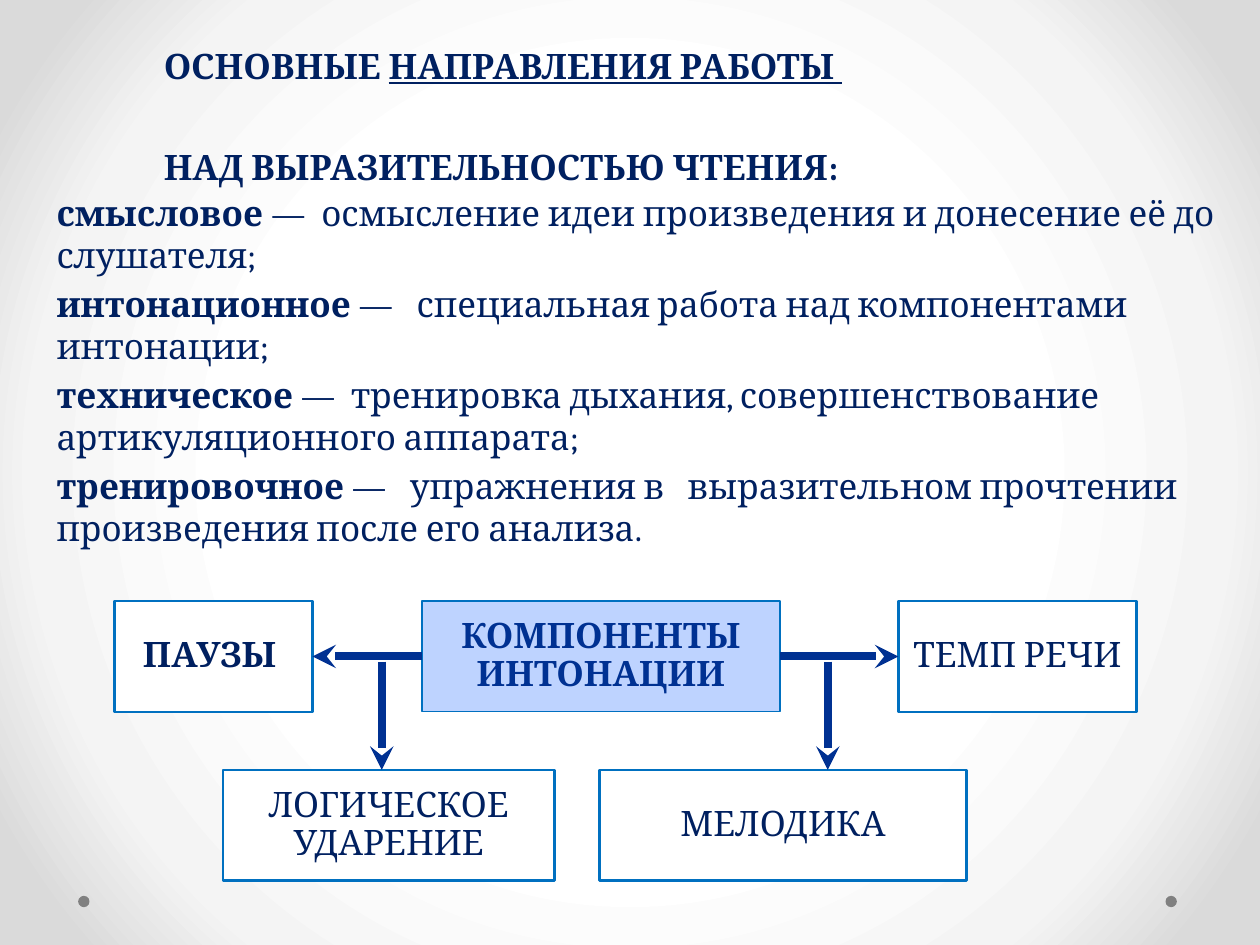
"""Builds a slide on the directions of work on expressive reading."""
from pptx import Presentation
from pptx.dml.color import RGBColor
from pptx.enum.shapes import MSO_CONNECTOR, MSO_SHAPE
from pptx.enum.text import MSO_ANCHOR, PP_ALIGN
from pptx.oxml import parse_xml
from pptx.oxml.ns import nsdecls
from pptx.util import Inches, Pt

CELL = Inches(0.1)
NAVY, BLUE, EDGE = "002060", "003192", "0070C0"
FONT = {"name": "Cambria", "size": Pt(20)}
FRAME = {"word_wrap": True, "vertical_anchor": MSO_ANCHOR.MIDDLE}
MARGINS = ["margin_left", "margin_top", "margin_right", "margin_bottom"]


def grid(*cells):
    return [round(c * CELL) for c in cells]


def style(obj, color=None, **values):
    for name, value in values.items():
        setattr(obj, name, value)
    if color:
        obj.color.rgb = RGBColor.from_string(color)


prs = Presentation()
prs.slide_width, prs.slide_height = grid(100, 75)
s = prs.slides.add_slide(prs.slide_layouts[6])

stops = "".join(
    f'<a:gs pos="{pos}000"><a:srgbClr val="{color}"/></a:gs>'
    for pos, color in [(50, "FFFFFF"), (76, "F4F4F4"), (92, "DADADA")]
)
s.background.fill.solid()
bg = s.background.fill._xPr
bg.replace(bg[0], parse_xml(
    f'<a:gradFill {nsdecls("a")} rotWithShape="1"><a:gsLst>{stops}</a:gsLst>'
    '<a:path path="circle"><a:fillToRect l="50000" t="50000" r="50000" b="50000"/>'
    '</a:path></a:gradFill>'
))

for x in (92.5, 6.2):
    sp = s.shapes.add_shape(MSO_SHAPE.OVAL, *grid(x, 71.1, 0.9, 0.9))
    sp.shadow.inherit = False
    sp.fill.solid()
    sp.fill.fore_color.rgb = RGBColor.from_string("808080")
    sp.line.fill.background()

tf = s.shapes.add_textbox(*grid(13, 3, 82, 7.7)).text_frame
style(tf, **FRAME, **dict.fromkeys(MARGINS, 0))
p = tf.paragraphs[0]
p.line_spacing = Pt(58)
for text, underline in [("ОСНОВНЫЕ ", False), ("НАПРАВЛЕНИЯ РАБОТЫ ", True),
                        ("НАД ВЫРАЗИТЕЛЬНОСТЬЮ ЧТЕНИЯ:", False)]:
    r = p.add_run()
    r.text = text
    style(r.font, NAVY, bold=True, underline=underline, **FONT)
    if underline:
        p.add_line_break()

directions = [
    ("смысловое", " —  осмысление идеи произведения и донесение её до слушателя;"),
    ("интонационное", " —   специальная работа над компонентами интонации;"),
    ("техническое", " —  тренировка дыхания, совершенствование артикуляционного аппарата;"),
    ("тренировочное", " —   упражнения в   выразительном прочтении произведения после его анализа."),
]
tf = s.shapes.add_textbox(*grid(3.5, 14.7, 94.5, 33.6)).text_frame
tf.word_wrap = True
for i, parts in enumerate(directions):
    p = tf.add_paragraph() if i else tf.paragraphs[0]
    p.space_before = Pt(4)
    for text, bold in zip(parts, (True, False)):
        r = p.add_run()
        r.text = text
        style(r.font, NAVY, bold=bold, **FONT)

TOP, BOTTOM, HEIGHT = 47.7, 61.1, 8.8
boxes = [
    ("ЛОГИЧЕСКОЕ УДАРЕНИЕ", 17.7, BOTTOM, 26.3, False, "FFFFFF", NAVY, 1.5),
    ("МЕЛОДИКА", 47.6, BOTTOM, 29.1, False, "FFFFFF", NAVY, 1.5),
    ("ПАУЗЫ ", 9.1, TOP, 15.7, True, "FFFFFF", NAVY, 1.5),
    ("ТЕМП РЕЧИ", 71.3, TOP, 18.9, False, "FFFFFF", NAVY, 1.5),
    ("КОМПОНЕНТЫ ИНТОНАЦИИ", 33.5, TOP, 28.4, True, "B7CFFF", BLUE, 0.75),
]
for text, x, y, w, bold, fill, color, weight in boxes:
    sp = s.shapes.add_shape(MSO_SHAPE.RECTANGLE, *grid(x, y, w, HEIGHT))
    sp.shadow.inherit = False
    sp.fill.solid()
    sp.fill.fore_color.rgb = RGBColor.from_string(fill)
    style(sp.line, EDGE, width=Pt(weight))
    style(sp.text_frame, **FRAME, **dict.fromkeys(MARGINS, Inches(0.11)))
    p = sp.text_frame.paragraphs[0]
    style(p, alignment=PP_ALIGN.CENTER, line_spacing=0.9)
    r = p.add_run()
    r.text = text
    style(r.font, color, bold=bold, **FONT)
sp.fill._xPr.solidFill[0].append(parse_xml(f'<a:alpha {nsdecls("a")} val="90000"/>'))

MID = TOP + HEIGHT / 2
arrows = [
    (61.9, MID, 71.3, MID),
    (65.7, MID + 0.4, 65.7, BOTTOM),
    (30.3, MID + 0.4, 30.3, BOTTOM),
    (33.5, MID, 24.8, MID),
]
for ends in arrows:
    cx = s.shapes.add_connector(MSO_CONNECTOR.STRAIGHT, *grid(*ends))
    style(cx.line, BLUE, width=Pt(4.5))
    cx.line._get_or_add_ln().append(
        parse_xml(f'<a:tailEnd {nsdecls("a")} type="stealth"/>'))
    cx._element.spPr.append(parse_xml(f'<a:effectLst {nsdecls("a")}/>'))

prs.save("out.pptx")
